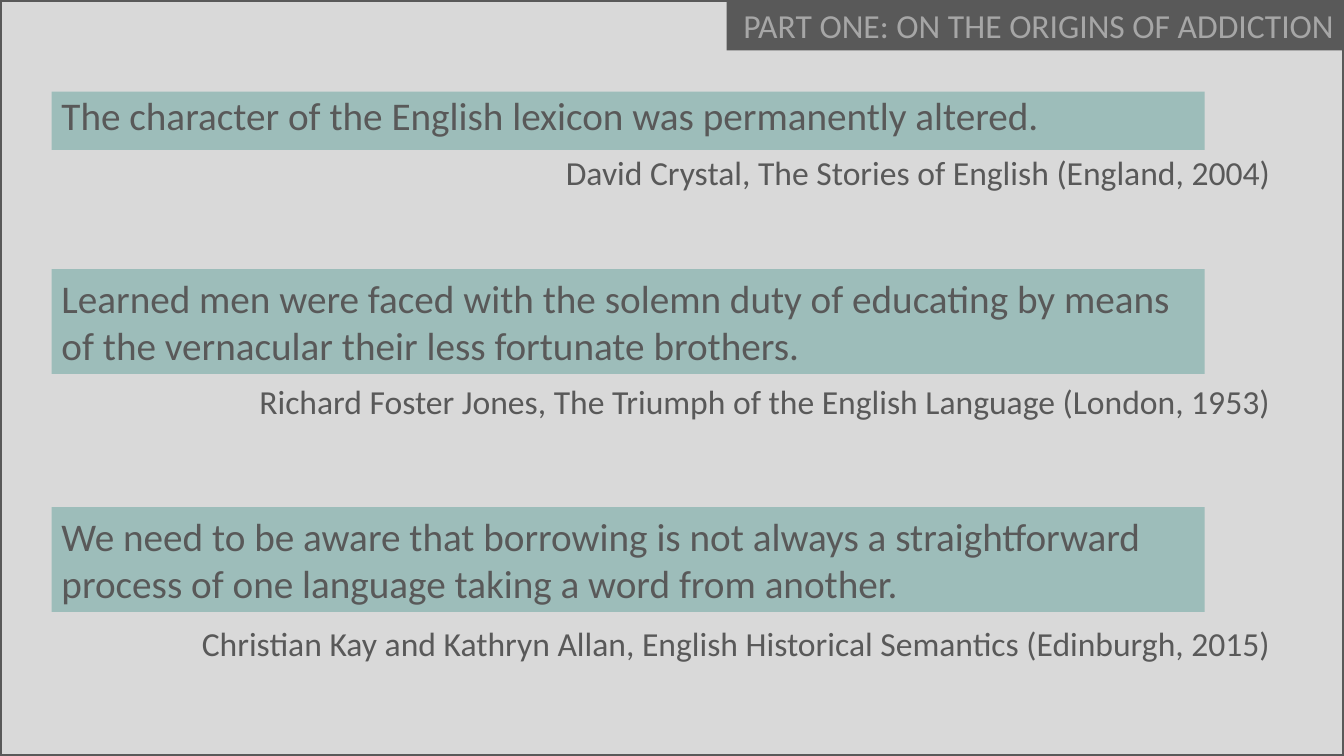
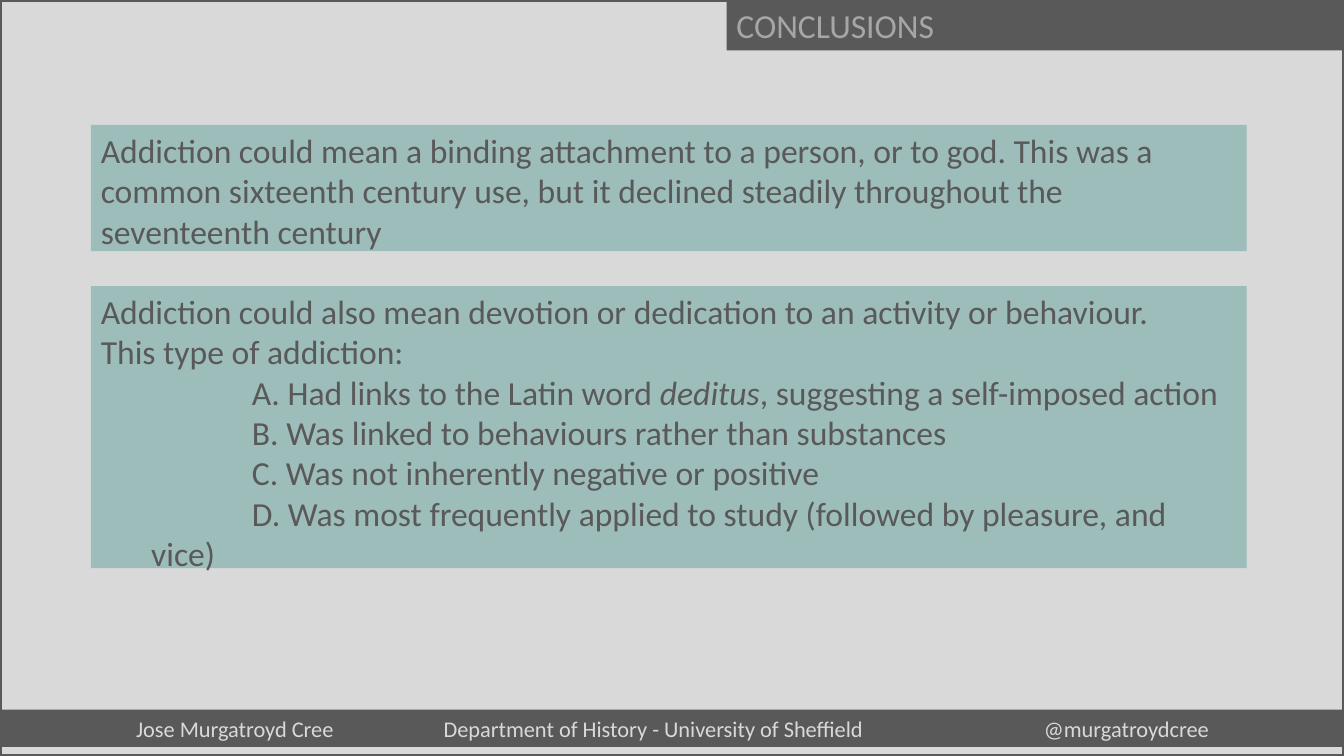
from lxml import etree
from pptx import Presentation
from pptx import util as u
from pptx.dml.color import RGBColor
from pptx.enum import shapes, text
from pptx.oxml.ns import qn

Cm = u.Cm
WIDTH, HEIGHT = 33.87, 19.05
COLOURS = {
    "page": "D9D9D9",
    "panel": "9DBDBA",
    "dark": "595959",
    "heading": "A6A6A6",
}
LEFT, RIGHT = text.PP_ALIGN.LEFT, text.PP_ALIGN.RIGHT
TOP, MIDDLE = text.MSO_ANCHOR.TOP, text.MSO_ANCHOR.MIDDLE

# Quote, panel top, panel height, line spacing, source, source top
QUOTES = [
    ("The character of the English lexicon was permanently altered.",
     2.31, 1.47, 0.9,
     "David Crystal, The Stories of English (England, 2004)", 3.71),
    ("Learned men were faced with the solemn duty of educating by means "
     "of the vernacular their less fortunate brothers.",
     6.78, 2.64, 1.0,
     "Richard Foster Jones, The Triumph of the English Language (London, 1953)", 9.47),
    ("We need to be aware that borrowing is not always a straightforward "
     "process of one language taking a word from another.",
     12.78, 2.64, 1.0,
     "Christian Kay and Kathryn Allan, English Historical Semantics (Edinburgh, 2015)", 15.57),
]
BINDING = [
    "Addiction could mean a binding attachment to a person, or to god. This was a "
    "common sixteenth century use, but it declined steadily throughout the "
    "seventeenth century",
]
DEVOTION = [
    "Addiction could also mean devotion or dedication to an activity or behaviour.",
    "This type of addiction:",
]
POINTS = [
    ["A. Had links to the Latin word ", "deditus", ", suggesting a self-imposed action"],
    ["B. Was linked to behaviours rather than substances"],
    ["C. Was not inherently negative or positive"],
    ["D. Was most frequently applied to study (followed by pleasure, and vice)"],
]
FOOTER = ["Jose Murgatroyd Cree", "Department of History - University of Sheffield",
          "@murgatroydcree"]
FOOTER_TABS = [7.75, 22.88]


def rgb(name):
    return RGBColor.from_string(COLOURS[name])


def set_attrs(obj, values):
    for name, value in values.items():
        setattr(obj, name, value)


def add_run(p, words, size, colour="dark", italic=False):
    r = p.add_run()
    r.text = words
    set_attrs(r.font, {"name": "Calibri", "size": u.Pt(size), "italic": italic})
    r.font.color.rgb = rgb(colour)


def write(sp, lines, size, colour="dark", align=LEFT, anchor=TOP, spacing=1.0):
    """Fill a shape with one paragraph per line of text."""
    tf = sp.text_frame
    set_attrs(tf, {"word_wrap": True, "vertical_anchor": anchor})
    for i, line in enumerate(lines):
        p = tf.add_paragraph() if i else tf.paragraphs[0]
        set_attrs(p, {"alignment": align, "line_spacing": spacing})
        add_run(p, line, size, colour)
    return tf


def add_block(slide, left, top, width, height, fill):
    sp = slide.shapes.add_shape(shapes.MSO_SHAPE.RECTANGLE,
                                Cm(left), Cm(top), Cm(width), Cm(height))
    sp.shadow.inherit = False
    sp.line.fill.background()
    sp.fill.solid()
    sp.fill.fore_color.rgb = rgb(fill)
    return sp


def add_frame(slide):
    """Outline the whole slide."""
    sp = add_block(slide, 0, 0, WIDTH, HEIGHT, "page")
    sp.fill.background()
    sp.line.color.rgb = rgb("dark")
    sp.line.width = u.Pt(2.5)


def add_heading(slide, title, align):
    sp = add_block(slide, 18.31, 0, WIDTH - 18.31, 1.27, "dark")
    write(sp, [title], 24, "heading", align, MIDDLE)


def add_quote(slide, quote, top, height, spacing, source, source_top):
    panel = add_block(slide, 1.3, top, 29.06, height, "panel")
    write(panel, [quote], 28, spacing=spacing)
    credit = slide.shapes.add_textbox(Cm(1.73), Cm(source_top), Cm(30.53), Cm(1.27))
    write(credit, [source], 24, align=RIGHT)


def add_panel(slide, top, height, lines):
    return write(add_block(slide, 2.29, top, 29.13, height, "panel"), lines, 24)


def add_point(tf, parts):
    """Add an indented point; every second part is italic."""
    p = tf.add_paragraph()
    p.alignment = LEFT
    pPr = p._p.get_or_add_pPr()
    pPr.set("marL", str(Cm(1.27)))
    pPr.set("indent", str(Cm(2.54)))
    for i, part in enumerate(parts):
        add_run(p, part, 24, italic=i % 2 == 1)


def add_footer(slide):
    sp = add_block(slide, 0, 17.88, WIDTH, 0.94, "dark")
    tf = write(sp, ["\t".join(FOOTER)], 16, "page", anchor=MIDDLE)
    tf.margin_left = Cm(3.43)
    tabs = etree.SubElement(tf.paragraphs[0]._p.get_or_add_pPr(), qn("a:tabLst"))
    for stop in FOOTER_TABS:
        etree.SubElement(tabs, qn("a:tab"), pos=str(Cm(stop)), algn="l")


def add_slide(prs, title, align):
    slide = prs.slides.add_slide(prs.slide_layouts[6])
    add_heading(slide, title, align)
    add_frame(slide)
    return slide


def main():
    prs = Presentation()
    set_attrs(prs, {"slide_width": Cm(WIDTH), "slide_height": Cm(HEIGHT)})
    background = prs.slide_master.background.fill
    background.solid()
    background.fore_color.rgb = rgb("page")

    origins = add_slide(prs, "PART ONE: ON THE ORIGINS OF ADDICTION", RIGHT)
    for quote in QUOTES:
        add_quote(origins, *quote)

    conclusions = add_slide(prs, "CONCLUSIONS", LEFT)
    add_panel(conclusions, 3.15, 3.18, BINDING)
    devotion = add_panel(conclusions, 7.21, 7.11, DEVOTION)
    for parts in POINTS:
        add_point(devotion, parts)
    add_footer(conclusions)

    prs.save("out.pptx")


if __name__ == "__main__":
    main()
